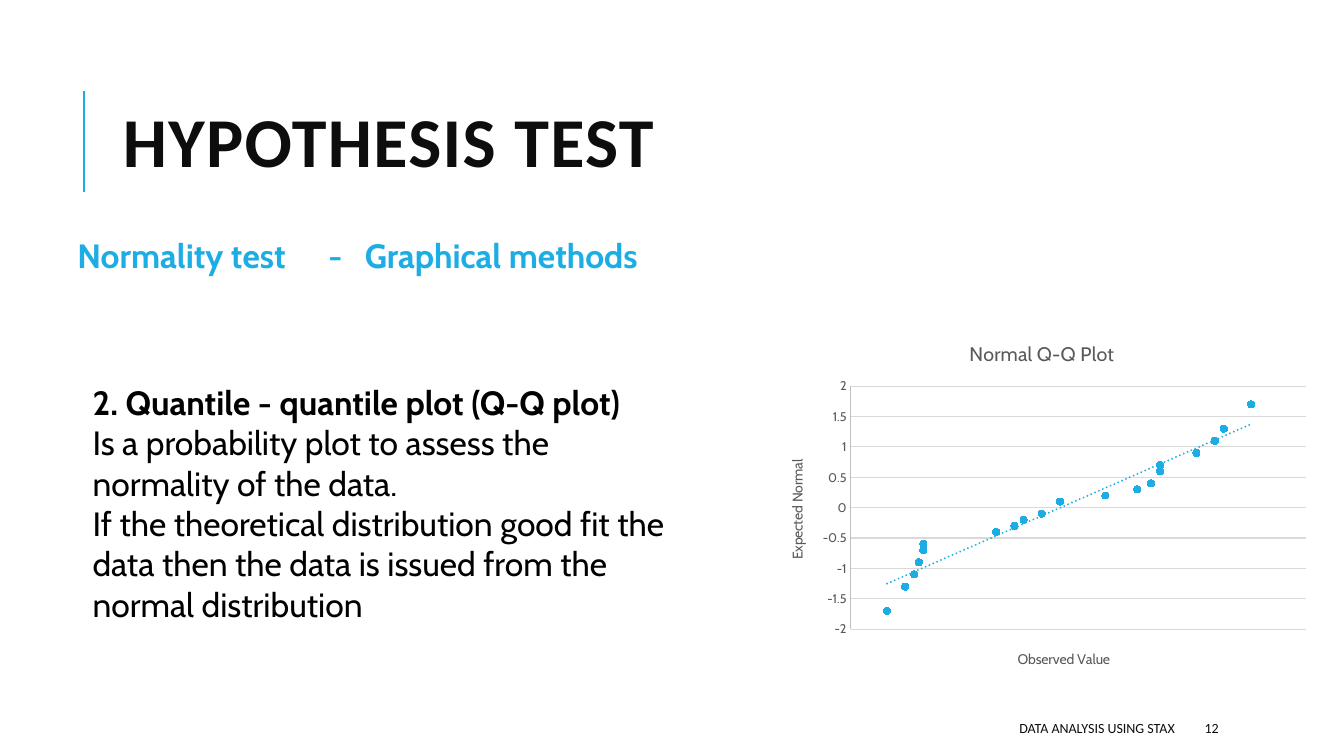
from lxml.etree import SubElement
from pptx import Presentation
from pptx.chart.data import XyChartData
from pptx.dml.color import RGBColor
from pptx.enum.chart import XL_CHART_TYPE, XL_MARKER_STYLE, XL_TICK_MARK, XL_TICK_LABEL_POSITION
from pptx.enum.shapes import MSO_CONNECTOR
from pptx.enum.text import MSO_ANCHOR, PP_ALIGN
from pptx.oxml import parse_xml
from pptx.oxml.ns import nsdecls, qn
from pptx.util import Inches, Pt

BLUE, INK, GREY = "1CADE4", "0D0D0D", "595959"

BLANK_ROWS = [None] * 2
OBSERVED = [58000, 62000, 64000, 65000, 66000, 66000, 82000, 86000, 88000, 92000,
            96000, 106000, 113000, 116000, 118000, 118000, 126000, 130000, 132000, 138000]
EXPECTED = [-1.7, -1.3, -1.1, -0.9, -0.7, -0.6, -0.4, -0.3, -0.2, -0.1,
            0.1, 0.2, 0.3, 0.4, 0.6, 0.7, 0.9, 1.1, 1.3, 1.7]


def color(value):
    return RGBColor.from_string(value)


def style_font(font, size, shade, name="Cabin", bold=False):
    font.name, font.size, font.bold = name, Pt(size), bold
    font.color.rgb = color(shade)


def add_text(slide, box, lines, size, shade, name="Cabin", bold_lines=0,
             anchor=MSO_ANCHOR.TOP, align=PP_ALIGN.LEFT):
    frame = slide.shapes.add_textbox(*map(Inches, box)).text_frame
    frame.word_wrap = True
    frame.vertical_anchor = anchor
    frame.text = "\n".join(lines)
    for index, paragraph in enumerate(frame.paragraphs):
        paragraph.alignment = align
        for run in paragraph.runs:
            style_font(run.font, size, shade, name, index < bold_lines)
    return frame.paragraphs[0]


def add_accent(slide, x, top, bottom):
    accent = slide.shapes.add_connector(
        MSO_CONNECTOR.STRAIGHT, Inches(x), Inches(bottom), Inches(x), Inches(top))
    accent.line.color.rgb = color(BLUE)
    accent.line.width = Pt(1.5)
    SubElement(accent._element.spPr, qn("a:effectLst"))


def manual_layout(**settings):
    entries = "".join(f'<c:{key} val="{value}"/>' for key, value in settings.items())
    return parse_xml(f'<c:layout {nsdecls("c")}><c:manualLayout>{entries}'
                     '</c:manualLayout></c:layout>')


def set_title(owner, text, size, x, y):
    title = owner.chart_title if hasattr(owner, "chart_title") else owner.axis_title
    title.text_frame.text = text
    style_font(title.text_frame.paragraphs[0].runs[0].font, size, GREY)
    element = title._element
    for layout in element.findall(qn("c:layout")):
        element.remove(layout)
    element.find(qn("c:tx")).addnext(manual_layout(xMode="edge", yMode="edge", x=x, y=y))


def add_trendline(series):
    trend = parse_xml(
        f'<c:trendline {nsdecls("c", "a")}><c:spPr><a:ln w="{Pt(1.5)}" cap="rnd">'
        f'<a:solidFill><a:srgbClr val="{BLUE}"/></a:solidFill><a:prstDash val="sysDot"/>'
        '</a:ln></c:spPr><c:trendlineType val="linear"/><c:dispRSqr val="0"/>'
        '<c:dispEq val="0"/></c:trendline>')
    series._element.find(qn("c:xVal")).addprevious(trend)


def drop_blank_points(series):
    for point in list(series._element.iter(qn("c:pt"))):
        if point.find(qn("c:v")).text in (None, "", "None"):
            point.getparent().remove(point)


def style_line(line, shade):
    line.color.rgb = color(shade)
    line.width = Pt(0.75)


def style_axes(chart):
    observed, expected = chart.category_axis, chart.value_axis
    observed.minimum_scale, observed.maximum_scale = 50000, 150000
    observed.has_major_gridlines = False
    set_title(observed, "Observed Value", 10, 0.45, 0.89)
    observed.visible = False
    expected.minimum_scale, expected.maximum_scale = -2, 2
    expected.major_unit = 0.5
    expected.major_tick_mark = expected.minor_tick_mark = XL_TICK_MARK.NONE
    expected.tick_label_position = XL_TICK_LABEL_POSITION.NEXT_TO_AXIS
    expected.tick_labels.number_format = "General"
    expected.tick_labels.number_format_is_linked = False
    style_font(expected.tick_labels.font, 9, GREY)
    style_line(expected.format.line, "BFBFBF")
    style_line(expected.major_gridlines.format.line, "D9D9D9")
    set_title(expected, "Expected Normal", 10, 0.03, 0.37)


def add_qq_plot(slide, box):
    data = XyChartData()
    points = data.add_series("Series 1")
    for observed, expected in zip(BLANK_ROWS + OBSERVED + BLANK_ROWS,
                                  BLANK_ROWS + EXPECTED + BLANK_ROWS):
        points.add_data_point(observed, expected)
    chart = slide.shapes.add_chart(
        XL_CHART_TYPE.XY_SCATTER, *map(Inches, box), data).chart
    chart.has_legend = False
    style_font(chart.font, 10, "000000")
    set_title(chart, "Normal Q-Q Plot", 14, 0.36, 0.04)
    style_axes(chart)

    plot = chart.plots[0]
    plot.vary_by_categories = False
    series = plot.series[0]
    drop_blank_points(series)
    series.smooth = False
    series.format.line.fill.background()
    series.marker.style = XL_MARKER_STYLE.CIRCLE
    series.marker.size = 5
    series.marker.format.fill.solid()
    series.marker.format.fill.fore_color.rgb = color(BLUE)
    series.marker.format.line.color.rgb = color(BLUE)
    add_trendline(series)

    area = chart._chartSpace.chart.plotArea
    for layout in area.findall(qn("c:layout")):
        area.remove(layout)
    area.insert(0, manual_layout(layoutTarget="inner", xMode="edge", yMode="edge",
                                 x=0.15, y=0.175, w=0.83, h=0.668))


def add_heading(slide):
    add_accent(slide, 0.83, 0.9, 1.9)
    heading = add_text(slide, (1.12, 0.64, 10.63, 1.64), ["HYPOTHESIS TEST"], 50, INK,
                       "Calibri", 1, MSO_ANCHOR.MIDDLE)
    heading.line_spacing = 0.8
    heading.runs[0].font._element.set("spc", "100")


def add_subheading(slide):
    add_text(slide, (0.67, 2.28, 2.4, 0.5), ["Normality test"], 24, BLUE, bold_lines=1)
    method = add_text(slide, (3.16, 2.28, 3.5, 0.5), ["-\tGraphical methods"], 24, BLUE,
                      bold_lines=1)
    stops = SubElement(method._p.get_or_add_pPr(), qn("a:tabLst"))
    SubElement(stops, qn("a:tab"), pos=str(Inches(0.36)), algn="l")


def add_footer(slide):
    add_text(slide, (5.3, 7.07, 6.45, 0.3), ["DATA ANALYSIS USING STAX"], 10, INK,
             "Calibri", anchor=MSO_ANCHOR.MIDDLE, align=PP_ALIGN.RIGHT)
    add_text(slide, (11.85, 7.07, 1.06, 0.3), ["12"], 10, INK, "Calibri",
             anchor=MSO_ANCHOR.MIDDLE)


def main():
    deck = Presentation()
    deck.slide_width, deck.slide_height = Inches(13.33), Inches(7.5)
    slide = deck.slides.add_slide(deck.slide_layouts[6])
    add_heading(slide)
    add_footer(slide)
    add_text(slide, (0.82, 3.74, 5.87, 2.52), [
        "2. Quantile - quantile plot (Q-Q plot)",
        "Is a probability plot to assess the normality of the data.",
        "If the theoretical distribution good fit the data then the data is issued "
        "from the normal distribution",
    ], 24, "000000", bold_lines=1)
    add_qq_plot(slide, (7.62, 3.2, 5.44, 3.61))
    add_subheading(slide)
    deck.save("out.pptx")


if __name__ == "__main__":
    main()
